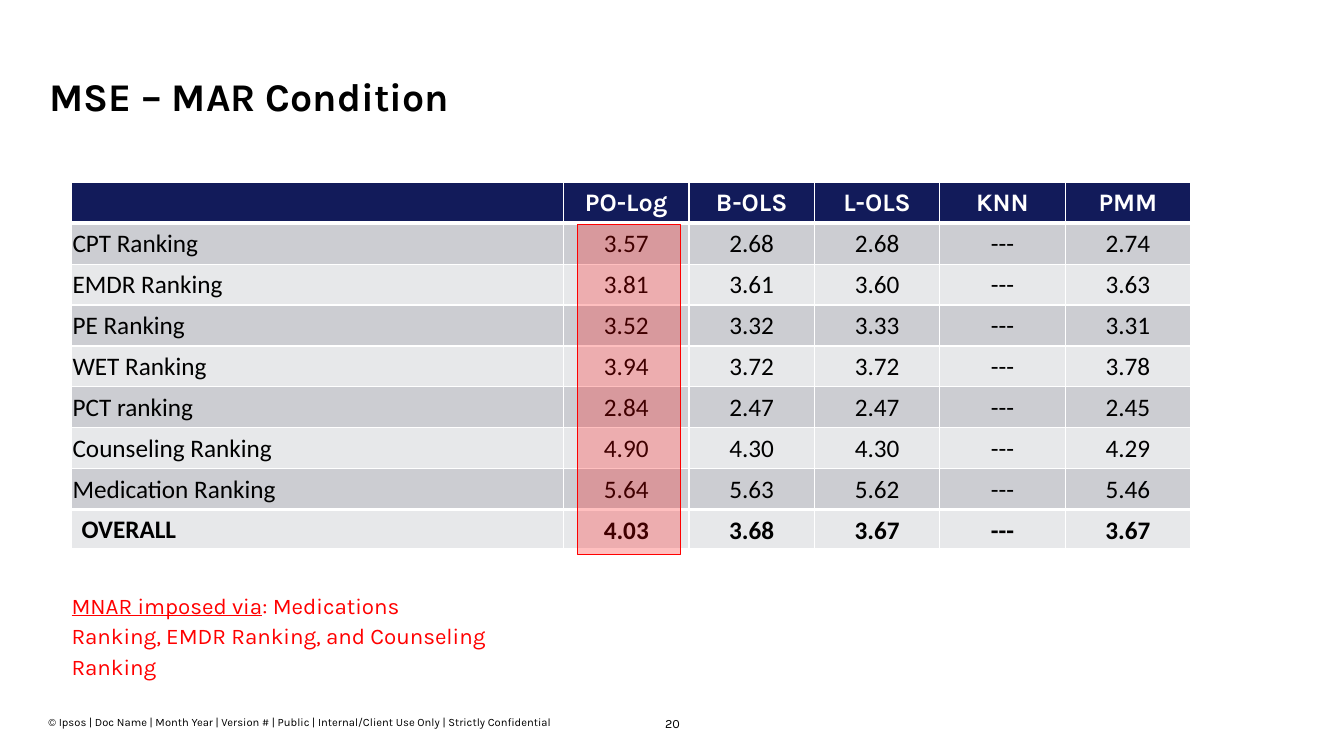
from lxml import etree
from pptx import Presentation
from pptx import util as u
from pptx.dml import color
from pptx.enum import shapes, text
from pptx.oxml import ns

RED = "FF0000"
RANKINGS = [
    ("", "PO-Log", "B-OLS", "L-OLS", "KNN", "PMM"),
    ("CPT Ranking", "3.57", "2.68", "2.68", "---", "2.74"),
    ("EMDR Ranking", "3.81", "3.61", "3.60", "---", "3.63"),
    ("PE Ranking", "3.52", "3.32", "3.33", "---", "3.31"),
    ("WET Ranking", "3.94", "3.72", "3.72", "---", "3.78"),
    ("PCT ranking", "2.84", "2.47", "2.47", "---", "2.45"),
    ("Counseling Ranking", "4.90", "4.30", "4.30", "---", "4.29"),
    ("Medication Ranking", "5.64", "5.63", "5.62", "---", "5.46"),
    ("OVERALL", "4.03", "3.68", "3.67", "---", "3.67"),
]


def rgb(value):
    return color.RGBColor.from_string(value)


def write(para, words, size=18, font="Karla", ink="000000", bold=False,
          underline=False, align=text.PP_ALIGN.LEFT, spacing=1.0):
    para.alignment = align
    para.line_spacing = spacing
    span = para.add_run()
    span.text = words
    span.font.size = u.Pt(size)
    span.font.name = font
    span.font.bold = bold
    span.font.underline = underline
    span.font.color.rgb = rgb(ink)


deck = Presentation()
deck.slide_width, deck.slide_height = u.Inches(13.33), u.Inches(7.5)
page = deck.slides.add_slide(deck.slide_layouts[6])
centre = text.PP_ALIGN.CENTER

# Text boxes: place, anchor and runs
top, bottom = text.MSO_ANCHOR.TOP, text.MSO_ANCHOR.BOTTOM
text_boxes = [
    ((0.48, 7.1, 5.11, 0.13), bottom, [
        ("© Ipsos | Doc Name | Month Year | Version # | Public | "
         "Internal/Client Use Only | Strictly Confidential", dict(size=8))]),
    ((6.4, 7.09, 0.54, 0.15), top, [
        ("20", dict(size=9, align=centre, spacing=1.1))]),
    ((0.49, 0.77, 12.36, 0.78), top, [
        ("MSE – MAR Condition", dict(size=28, bold=True, spacing=0.9))]),
    ((0.71, 5.83, 4.14, 0.59), top, [
        ("MNAR imposed via", dict(size=16, ink=RED, underline=True, spacing=1.15)),
        (": Medications Ranking, EMDR Ranking, and Counseling Ranking",
         dict(size=16, ink=RED, spacing=1.15))]),
]
for place, anchor, spans in text_boxes:
    box = page.shapes.add_textbox(*map(u.Inches, place))
    frame = box.text_frame
    frame.word_wrap = True
    frame.vertical_anchor = anchor
    frame.margin_left = frame.margin_right = frame.margin_top = frame.margin_bottom = 0
    for words, style in spans:
        write(frame.paragraphs[0], words, **style)

# Table of errors by method
last = len(RANKINGS) - 1
table = page.shapes.add_table(len(RANKINGS), 6, u.Inches(0.71), u.Inches(1.81),
                              u.Inches(11.1), u.Inches(3.65)).table
for number, column in enumerate(table.columns):
    column.width = u.Inches(6.22 / 5 if number else 4.88)

for row, values in enumerate(RANKINGS):
    table.rows[row].height = u.Inches(3.65 / len(RANKINGS))
    # Thick rules below the header and around the overall row
    borders = {"L": 1, "R": 1, "T": 3 if row in (1, last) else 1,
               "B": 3 if row in (0, last - 1, last) else 1}
    for number, words in enumerate(values):
        cell = table.cell(row, number)
        properties = cell._tc.get_or_add_tcPr()
        for side, points in borders.items():
            line = etree.SubElement(properties, ns.qn("a:ln" + side), w=str(u.Pt(points)))
            fill = etree.SubElement(line, ns.qn("a:solidFill"))
            etree.SubElement(fill, ns.qn("a:srgbClr"), val="FFFFFF")
        cell.fill.solid()
        cell.fill.fore_color.rgb = rgb(
            "121B5A" if row == 0 else "CCCDD2" if row % 2 else "E7E8EA")
        cell.vertical_anchor = text.MSO_ANCHOR.MIDDLE if row else bottom
        if row and (row, number) != (last, 0):
            cell.margin_left = cell.margin_right = cell.margin_top = u.Inches(0.01)
            cell.margin_bottom = 0
        if words:
            write(cell.text_frame.paragraphs[0], words,
                  font="Calibri" if row else "Karla",
                  ink="000000" if row else "FFFFFF",
                  bold=row in (0, last),
                  align=centre if number else text.PP_ALIGN.LEFT)

# Translucent highlight over the PO-Log column
highlight = page.shapes.add_shape(
    shapes.MSO_SHAPE.RECTANGLE, *map(u.Inches, (5.73, 2.23, 1.02, 3.27)))
highlight.shadow.inherit = False
highlight.fill.solid()
highlight.fill.fore_color.rgb = rgb(RED)
tint = highlight._element.spPr.find(ns.qn("a:solidFill")).find(ns.qn("a:srgbClr"))
etree.SubElement(tint, ns.qn("a:alpha"), val="25000")
highlight.line.color.rgb = rgb(RED)
highlight.line.width = u.Pt(1)

deck.save("out.pptx")
